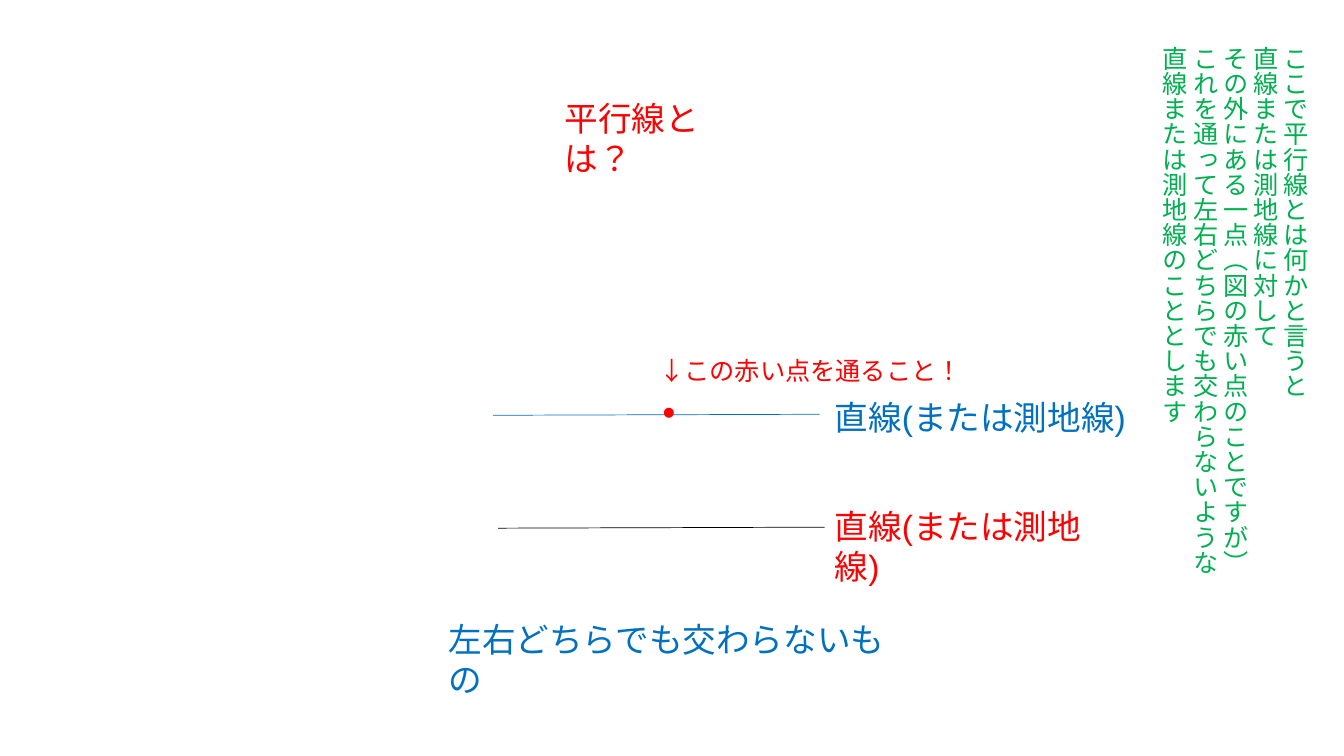
import pptx
import pptx.util
import pptx.dml.color
import pptx.enum.lang
import pptx.enum.shapes
import pptx.enum.text
import lxml.etree

PX = 9144
RED = pptx.dml.color.RGBColor(0xFF, 0x00, 0x00)
BLUE = pptx.dml.color.RGBColor(0x00, 0x70, 0xC0)
GREEN = pptx.dml.color.RGBColor(0x00, 0xB0, 0x50)
BLACK = pptx.dml.color.RGBColor(0x00, 0x00, 0x00)
CJK = "Noto Sans CJK JP"
DRAWING = "http://schemas.openxmlformats.org/drawingml/2006/main"

deck = pptx.Presentation()
deck.slide_width = 1333 * PX
deck.slide_height = 750 * PX
page = deck.slides.add_slide(deck.slide_layouts[6])


def add_text(text, *, at, color, size=24, font="Arial", wrap=True, vertical=False):
    box = page.shapes.add_textbox(*[length * PX for length in at])
    frame = box.text_frame
    frame.word_wrap = wrap
    frame.auto_size = pptx.enum.text.MSO_AUTO_SIZE.SHAPE_TO_FIT_TEXT
    if vertical:
        box.element.txBody.bodyPr.set("vert", "eaVert")
    for index, line in enumerate(text.split("\n")):
        para = frame.add_paragraph() if index else frame.paragraphs[0]
        span = para.add_run()
        span.text = line
        span.font.name = font
        span.font.size = pptx.util.Pt(size)
        span.font.color.rgb = color
        span.font.language_id = pptx.enum.lang.MSO_LANGUAGE_ID.JAPANESE
        east_asian = lxml.etree.Element(f"{{{DRAWING}}}ea", typeface=CJK)
        para.runs[0].font.fill
        latin = box.element.txBody.findall(f".//{{{DRAWING}}}latin")[-1]
        latin.addnext(east_asian)


for left, top, color in [(489, 412, BLUE), (494, 524, BLACK)]:
    line = page.shapes.add_connector(
        pptx.enum.shapes.MSO_CONNECTOR.STRAIGHT,
        left * PX, top * PX, (left + 324) * PX, (top - 1) * PX)
    line.line.color.rgb = color
    line.line.width = pptx.util.Pt(0.5)
    lxml.etree.SubElement(line.element.spPr, f"{{{DRAWING}}}effectLst")

add_text("●", at=(648, 398, 31, 24), color=RED, size=8, font=CJK, wrap=False)
add_text("平行線とは？", at=(550, 92, 213, 50), color=RED)
add_text("左右どちらでも交わらないもの", at=(435, 609, 458, 50), color=BLUE)
add_text("↓この赤い点を通ること！", at=(644, 348, 323, 40), color=RED,
         size=18, font="Calibri", wrap=False)
for top, width, color in [(497, 306, RED), (389, 318, BLUE)]:
    add_text("直線(または測地線)", at=(818, top, width, 50), color=color)

explanation = """ここで平行線とは何かと言うと
直線または測地線に対して
その外にある一点（図の赤い点のことですが）
これを通って左右どちらでも交わらないような
直線または測地線のこととします"""
add_text(explanation, at=(1133, 36, 172, 525), color=GREEN,
         size=18, font=CJK, wrap=False, vertical=True)

deck.save("out.pptx")
